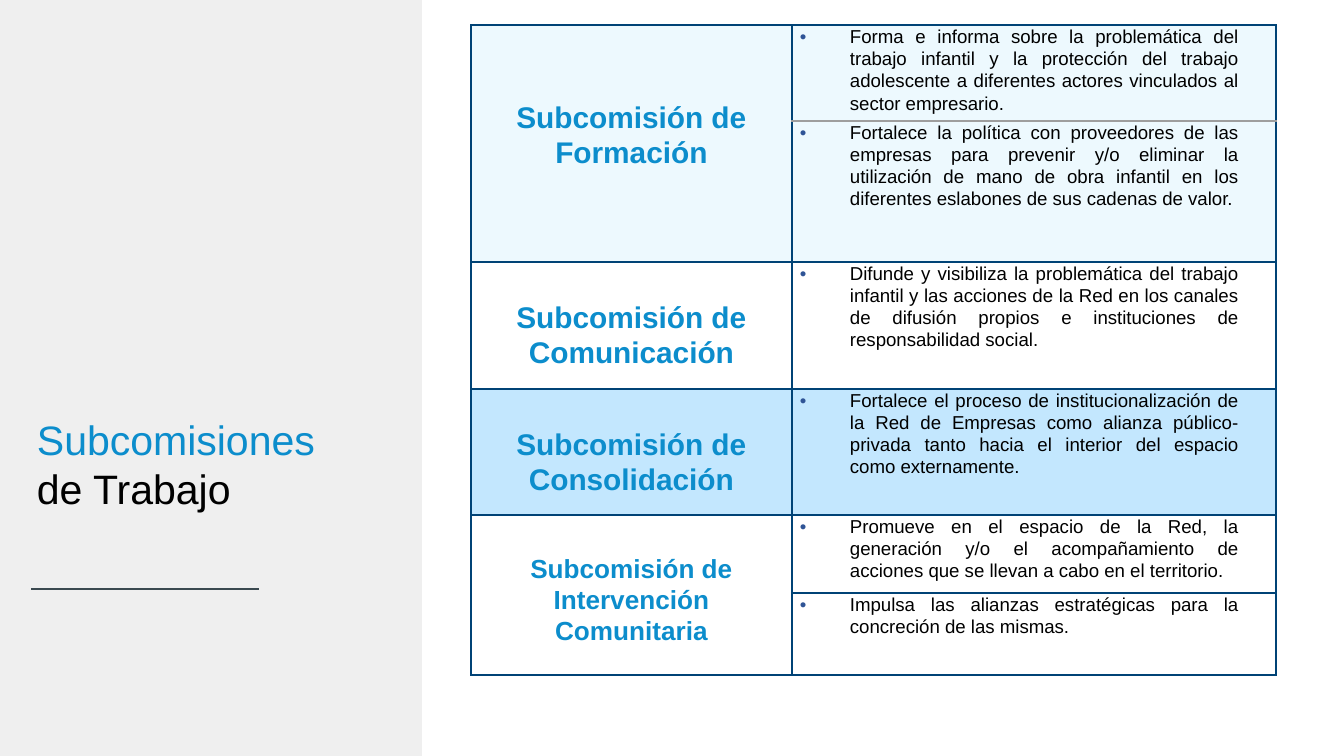
from dataclasses import dataclass

from lxml import etree
from pptx import Presentation
from pptx.dml.color import RGBColor
from pptx.enum.shapes import MSO_CONNECTOR, MSO_SHAPE
from pptx.enum.text import MSO_ANCHOR, PP_ALIGN
from pptx.oxml.ns import qn
from pptx.util import Emu, Pt

LEFT, CENTER, JUSTIFY = PP_ALIGN.LEFT, PP_ALIGN.CENTER, PP_ALIGN.JUSTIFY
TOP, MIDDLE = MSO_ANCHOR.TOP, MSO_ANCHOR.MIDDLE
RECT, STRAIGHT = MSO_SHAPE.RECTANGLE, MSO_CONNECTOR.STRAIGHT


@dataclass(frozen=True)
class Theme:
    font: str = "Arial"
    accent: str = "0C8DCC"
    text: str = "000000"
    panel: str = "EFEFEF"
    rule: str = "3A4950"
    border: str = "004376"
    divider: str = "9E9E9E"
    bullet: str = "2F5496"
    pale: str = "EDF9FE"
    sky: str = "C3E7FE"
    title_size: int = 22
    label_size: int = 16
    small_label_size: int = 14
    body_size: int = 10
    spacing: float = 1.07


@dataclass(frozen=True)
class Group:
    label: str
    items: tuple[str, ...]
    heights: tuple[int, ...]
    label_top: int = 0
    label_bottom: int = 0
    label_size: int = Theme.label_size
    fill: str | None = None
    divider: str = Theme.border


T = Theme()
GROUPS = [
    Group("Subcomisión de Formación",
          ("Forma e informa sobre la problemática del trabajo infantil y la protección "
           "del trabajo adolescente a diferentes actores vinculados al sector empresario.",
           "Fortalece la política con proveedores de las empresas para prevenir y/o "
           "eliminar la utilización de mano de obra infantil en los diferentes eslabones "
           "de sus cadenas de valor."),
          (89, 141), label_bottom=18, fill=T.pale, divider=T.divider),
    Group("Subcomisión de Comunicación",
          ("Difunde y visibiliza la problemática del trabajo infantil y las acciones de "
           "la Red en los canales de difusión propios e instituciones de "
           "responsabilidad social.",),
          (127,), label_top=18),
    Group("Subcomisión de Consolidación",
          ("Fortalece el proceso de institucionalización de la Red de Empresas como "
           "alianza público-privada tanto hacia el interior del espacio como "
           "externamente.",),
          (126,), label_top=20, fill=T.sky),
    Group("Subcomisión de Intervención Comunitaria",
          ("Promueve en el espacio de la Red, la generación y/o el acompañamiento de "
           "acciones que se llevan a cabo en el territorio.",
           "Impulsa las alianzas estratégicas para la concreción de las mismas."),
          (78, 82), label_top=9, label_size=T.small_label_size),
]
COLUMNS = (321, 484)


def px(n: int) -> Emu:
    return Emu(round(n * 914400 / 134.4))


def rgb(color: str) -> RGBColor:
    return RGBColor.from_string(color)


def write(p, text: str, *, size: int, color: str = T.text, bold: bool = False,
          align=LEFT, spacing: float = 1.0) -> None:
    p.alignment, p.line_spacing = align, spacing
    r = p.add_run()
    r.text = text
    r.font.name, r.font.size, r.font.bold = T.font, Pt(size), bold
    r.font.color.rgb = rgb(color)


def add_bullet(p, indent: int) -> None:
    pPr = p._p.get_or_add_pPr()
    pPr.set("marL", str(px(indent)))
    pPr.set("indent", str(-px(indent)))
    clr = etree.SubElement(pPr, qn("a:buClr"))
    etree.SubElement(clr, qn("a:srgbClr"), val=T.bullet)
    etree.SubElement(pPr, qn("a:buFont"), typeface=T.font)
    etree.SubElement(pPr, qn("a:buChar"), char="•")


def format_cell(cell, fill: str | None, top: str = T.border, bottom: str = T.border) -> None:
    tcPr = cell._tc.get_or_add_tcPr()
    edges = {"lnL": T.border, "lnR": T.border, "lnT": top, "lnB": bottom}
    for tag, color in edges.items():
        width = Pt(0.75) if color == T.divider else Pt(1)
        ln = etree.SubElement(tcPr, qn(f"a:{tag}"), w=str(width))
        solid = etree.SubElement(ln, qn("a:solidFill"))
        etree.SubElement(solid, qn("a:srgbClr"), val=color)
    if fill:
        cell.fill.solid()
        cell.fill.fore_color.rgb = rgb(fill)
    else:
        cell.fill.background()
    cell.vertical_anchor = TOP
    cell.margin_left = cell.margin_right = px(8)
    cell.margin_top = cell.margin_bottom = 0


def add_group(table, first: int, group: Group) -> None:
    last = len(group.items) - 1
    for i, (item, height) in enumerate(zip(group.items, group.heights)):
        table.rows[first + i].height = px(height)
        format_cell(table.cell(first + i, 0), group.fill)
        cell = table.cell(first + i, 1)
        format_cell(cell, group.fill,
                    top=group.divider if i else T.border,
                    bottom=group.divider if i < last else T.border)
        cell.margin_right = px(38)
        p = cell.text_frame.paragraphs[0]
        write(p, item, size=T.body_size, align=JUSTIFY, spacing=T.spacing)
        add_bullet(p, 50)
    label = table.cell(first, 0)
    if last:
        label.merge(table.cell(first + last, 0))
    label.vertical_anchor = MIDDLE
    label.margin_top, label.margin_bottom = px(group.label_top), px(group.label_bottom)
    write(label.text_frame.paragraphs[0], group.label, size=group.label_size,
          color=T.accent, bold=True, align=CENTER, spacing=T.spacing)


def add_panel(s) -> None:
    sp = s.shapes.add_shape(RECT, px(-1), 0, px(423), px(756))
    sp.shadow.inherit = False
    sp.fill.solid()
    sp.fill.fore_color.rgb = rgb(T.panel)
    sp.line.fill.background()


def add_title(s) -> None:
    tf = s.shapes.add_textbox(px(31), px(364), px(359), px(144)).text_frame
    tf.word_wrap, tf.vertical_anchor = True, TOP
    tf.margin_left = px(6)
    tf.margin_right = tf.margin_bottom = px(5)
    tf.margin_top = px(50)
    write(tf.paragraphs[0], "Subcomisiones", size=T.title_size, color=T.accent)
    write(tf.add_paragraph(), "de Trabajo", size=T.title_size)


def add_rule(s) -> None:
    line = s.shapes.add_connector(STRAIGHT, px(259), px(589), px(31), px(589))
    line.line.color.rgb, line.line.width = rgb(T.rule), Pt(0.75)
    etree.SubElement(line._element.spPr, qn("a:effectLst"))


def add_groups(s) -> None:
    heights = [h for g in GROUPS for h in g.heights]
    table = s.shapes.add_table(len(heights), len(COLUMNS), px(471), px(25),
                               px(sum(COLUMNS)), px(sum(heights))).table
    table.first_row = table.horz_banding = False
    for column, width in zip(table.columns, COLUMNS):
        column.width = px(width)
    first = 0
    for group in GROUPS:
        add_group(table, first, group)
        first += len(group.items)


def main() -> None:
    prs = Presentation()
    prs.slide_width, prs.slide_height = px(1344), px(756)
    s = prs.slides.add_slide(prs.slide_layouts[6])
    # Left panel with the title
    add_panel(s)
    add_title(s)
    add_rule(s)
    # Table of subcommittees
    add_groups(s)
    prs.save("out.pptx")


if __name__ == "__main__":
    main()
